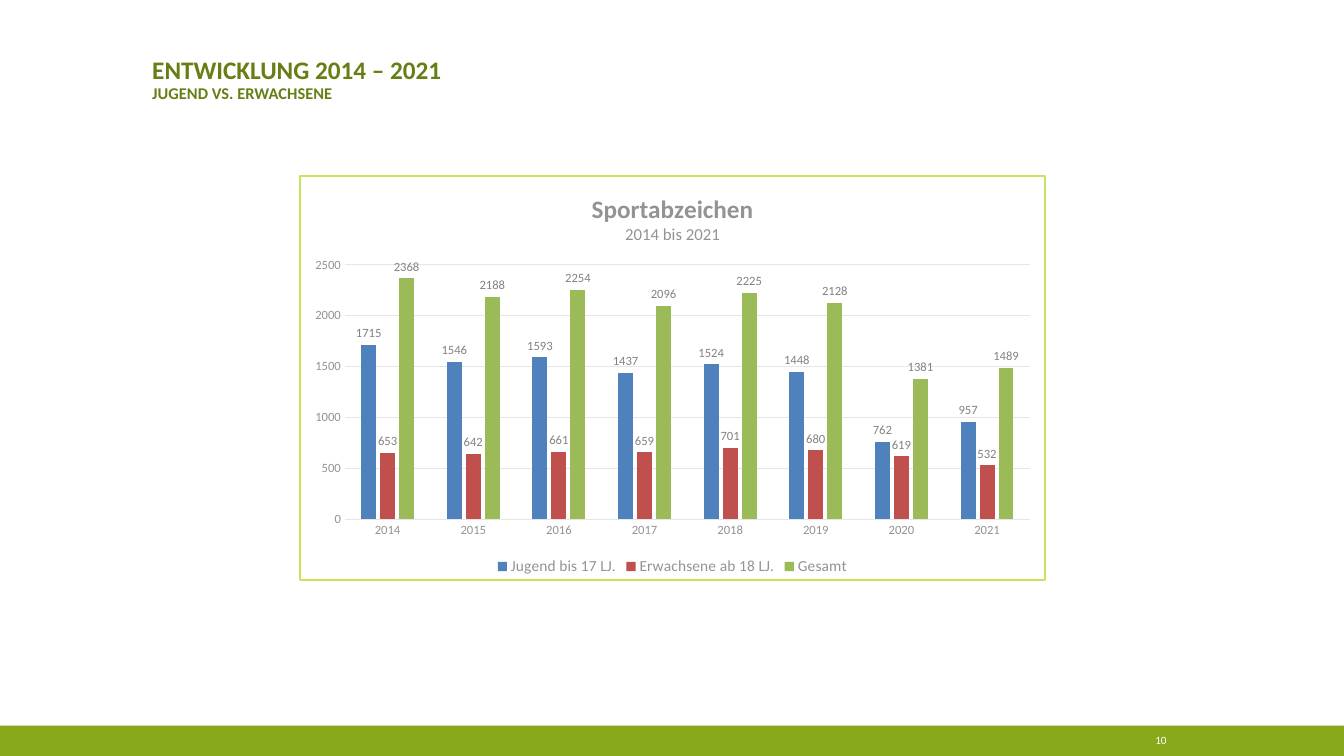
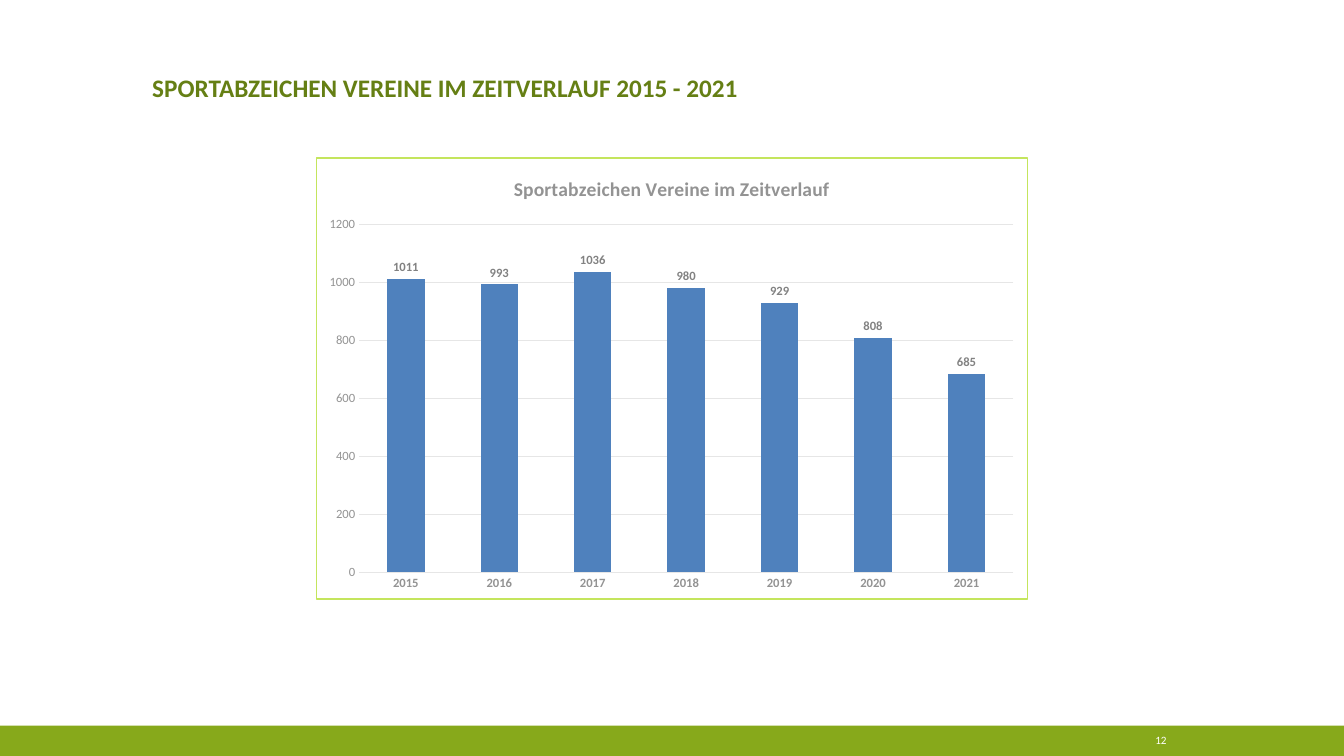
from lxml import etree
from pptx import Presentation
from pptx.chart.data import CategoryChartData
from pptx.dml.color import RGBColor
from pptx.enum.chart import XL_CHART_TYPE, XL_LABEL_POSITION, XL_LEGEND_POSITION, XL_TICK_MARK
from pptx.enum.shapes import MSO_SHAPE
from pptx.enum.text import MSO_ANCHOR, MSO_AUTO_SIZE, PP_ALIGN
from pptx.oxml import parse_xml
from pptx.oxml.ns import nsdecls, qn
from pptx.util import Inches, Pt

FONT = "Calibri"
BAND_GREEN = RGBColor(0x87, 0xA9, 0x1B)
TITLE_GREEN = RGBColor(0x65, 0x7F, 0x14)
BORDER_GREEN = RGBColor(0xC4, 0xE5, 0x5D)
WHITE = RGBColor(0xFF, 0xFF, 0xFF)
TEXT_GREY = RGBColor(0x59, 0x59, 0x59)
AXIS_GREY = RGBColor(0x93, 0x93, 0x93)
LABEL_GREY = RGBColor(0x82, 0x82, 0x82)
GRID_GREY = RGBColor(0xE6, 0xE6, 0xE6)
SERIES_COLORS = [
    RGBColor(0x4F, 0x81, 0xBD),
    RGBColor(0xC0, 0x50, 0x4D),
    RGBColor(0x9B, 0xBB, 0x59),
]

SLIDES = [
    {
        "title": [("ENTWICKLUNG 2014 – 2021", 18), ("JUGEND VS. ERWACHSENE", 11.7)],
        "number": "10",
        "box": (2.97, 1.74, 7.4, 4.02),
        "plot_area": {"x": 0.06, "y": 0.22, "w": 0.92, "h": 0.63},
        "chart_title": [("Sportabzeichen", 18, True), ("2014 bis 2021", 12, False)],
        "years": range(2014, 2022),
        "series": {
            "Jugend bis 17 LJ.": [1715, 1546, 1593, 1437, 1524, 1448, 762, 957],
            "Erwachsene ab 18 LJ.": [653, 642, 661, 659, 701, 680, 619, 532],
            "Gesamt": [2368, 2188, 2254, 2096, 2225, 2128, 1381, 1489],
        },
        "scale": {"maximum_scale": 2500, "major_unit": 500},
        "bars": {"gap_width": 219, "overlap": -27},
        "bold": False,
        "legend": True,
        "border": 1,
    },
    {
        "title": [("SPORTABZEICHEN VEREINE IM ZEITVERLAUF 2015 - 2021", 18)],
        "number": "12",
        "box": (3.13, 1.56, 7.07, 4.39),
        "plot_area": {"x": 0.06, "y": 0.15, "w": 0.92, "h": 0.79},
        "chart_title": [("Sportabzeichen Vereine im Zeitverlauf", 14, True)],
        "years": range(2015, 2022),
        "series": {"Series 1": [1011, 993, 1036, 980, 929, 808, 685]},
        "scale": {"maximum_scale": 1200, "major_unit": 200},
        "bars": {"gap_width": 150, "overlap": 0},
        "bold": True,
        "legend": False,
        "border": 1.25,
    },
]


def set_font(font, size, color, bold=False):
    for name, value in {"name": FONT, "size": Pt(size), "bold": bold}.items():
        setattr(font, name, value)
    font.color.rgb = color


def frame_chart(chart, plot_area, border_width):
    """Place the inner plot area by fractions, and fill and outline the chart."""
    area = chart.element.find(".//" + qn("c:plotArea"))
    for old_layout in area.findall(qn("c:layout")):
        area.remove(old_layout)
    layout = parse_xml(
        f'<c:layout {nsdecls("c")}><c:manualLayout><c:layoutTarget val="inner"/>'
        '<c:xMode val="edge"/><c:yMode val="edge"/></c:manualLayout></c:layout>'
    )
    for side, fraction in plot_area.items():
        etree.SubElement(layout[0], qn(f"c:{side}"), val=str(fraction))
    area.insert(0, layout)
    chart.element.find(qn("c:txPr")).addprevious(parse_xml(
        f'<c:spPr {nsdecls("c", "a")}>'
        f'<a:solidFill><a:srgbClr val="{WHITE}"/></a:solidFill>'
        f'<a:ln w="{Pt(border_width)}"><a:solidFill><a:srgbClr val="{BORDER_GREEN}"/>'
        '</a:solidFill></a:ln></c:spPr>'
    ))


prs = Presentation()
prs.slide_width, prs.slide_height = Inches(13.33), Inches(7.5)
title_only = prs.slide_layouts[5]

# The title position is inherited from the layout
layout_title = title_only.placeholders[0]
title_box = {"left": 1.41, "top": 0.53, "width": 6.42, "height": 0.54}
for side, length in title_box.items():
    setattr(layout_title, side, Inches(length))

for number, content in enumerate(SLIDES):
    slide = prs.slides.add_slide(title_only)

    # The green band moves to the master, so that every slide shows it
    if number == 0:
        band = slide.shapes.add_shape(
            MSO_SHAPE.RECTANGLE, 0, Inches(7.2), prs.slide_width, Inches(0.3))
        band.shadow.inherit = False
        band.fill.solid()
        band.fill.fore_color.rgb = BAND_GREEN
        band.line.fill.background()
        prs.slide_master.element.cSld.spTree.insert(2, band.element)

    heading = slide.shapes.title.text_frame
    heading.auto_size = MSO_AUTO_SIZE.NONE
    heading.vertical_anchor = MSO_ANCHOR.BOTTOM
    heading_line = heading.paragraphs[0]
    heading_line.alignment = PP_ALIGN.LEFT
    heading_line.line_spacing = 0.9
    for position, (text, size) in enumerate(content["title"]):
        if position:
            heading_line.add_line_break()
        run = heading_line.add_run()
        run.text = text
        set_font(run.font, size, TITLE_GREEN, bold=True)

    page_number = slide.shapes.add_textbox(
        Inches(10.82), Inches(7.22), Inches(0.85), Inches(0.25)).text_frame
    page_number.word_wrap = True
    page_number.vertical_anchor = MSO_ANCHOR.MIDDLE
    page_number.text = content["number"]
    page_number.paragraphs[0].alignment = PP_ALIGN.RIGHT
    set_font(page_number.paragraphs[0].runs[0].font, 8, WHITE)

    badges = CategoryChartData()
    badges.categories = [str(year) for year in content["years"]]
    for name, values in content["series"].items():
        badges.add_series(name, values)
    chart = slide.shapes.add_chart(
        XL_CHART_TYPE.COLUMN_CLUSTERED, *map(Inches, content["box"]), badges).chart
    set_font(chart.font, 10, TEXT_GREY)
    frame_chart(chart, content["plot_area"], content["border"])

    chart_heading = chart.chart_title.text_frame
    chart.chart_title.include_in_layout = False
    for position, (text, size, bold) in enumerate(content["chart_title"]):
        line = chart_heading.add_paragraph() if position else chart_heading.paragraphs[0]
        run = line.add_run()
        run.text = text
        set_font(run.font, size, AXIS_GREY, bold)

    years, counts = chart.category_axis, chart.value_axis
    for axis, bold in ((years, content["bold"]), (counts, False)):
        axis.major_tick_mark = axis.minor_tick_mark = XL_TICK_MARK.NONE
        set_font(axis.tick_labels.font, 9, AXIS_GREY, bold)
    counts.minimum_scale = 0
    for name, value in content["scale"].items():
        setattr(counts, name, value)
    counts.format.line.fill.background()
    for line in (years.format.line, counts.major_gridlines.format.line):
        line.color.rgb = GRID_GREY
        line.width = Pt(0.75)

    plot = chart.plots[0]
    plot.vary_by_categories = False
    for name, value in content["bars"].items():
        setattr(plot, name, value)
    for series, color in zip(plot.series, SERIES_COLORS):
        series.format.fill.solid()
        series.format.fill.fore_color.rgb = color
        labels = series.data_labels
        labels.show_value = True
        labels.position = XL_LABEL_POSITION.OUTSIDE_END
        set_font(labels.font, 9, LABEL_GREY, content["bold"])

    chart.has_legend = content["legend"]
    if chart.has_legend:
        chart.legend.position = XL_LEGEND_POSITION.BOTTOM
        chart.legend.include_in_layout = False
        set_font(chart.legend.font, 11, AXIS_GREY)

prs.save("out.pptx")
